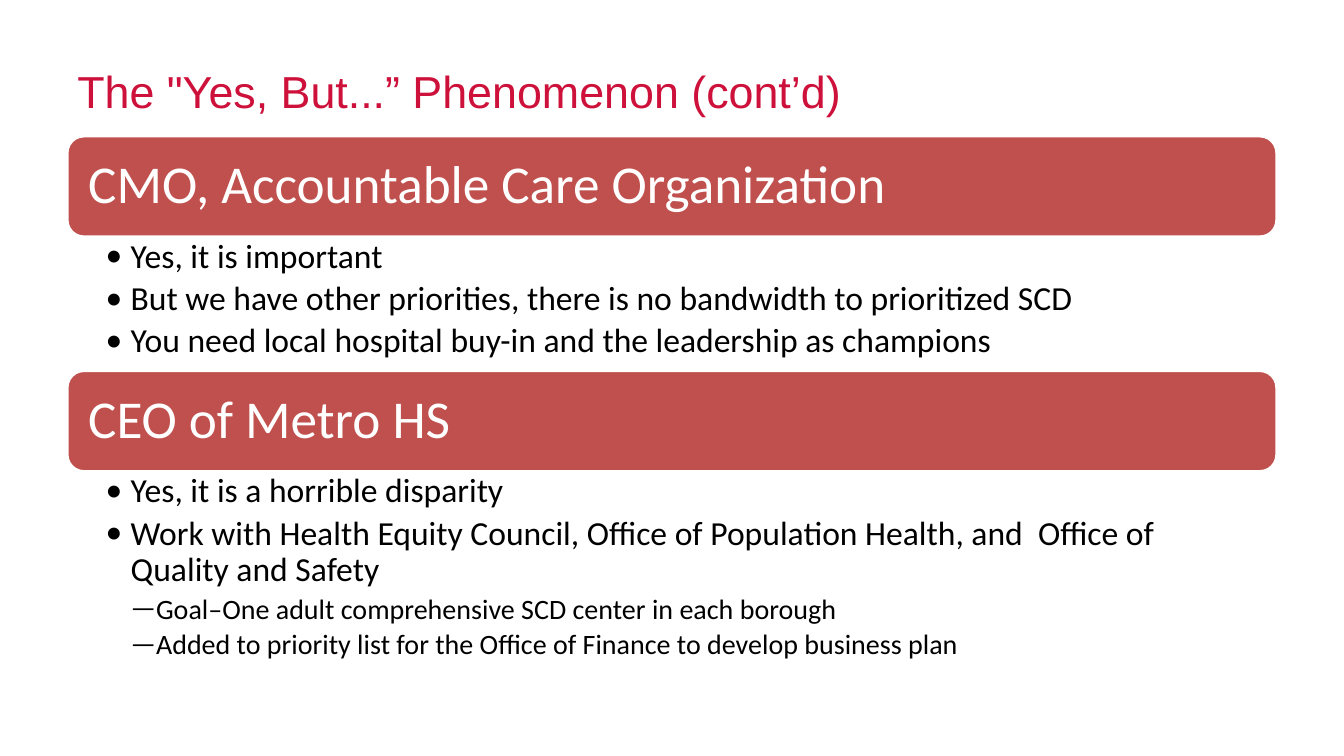
import pptx
import pptx.util
import pptx.dml.color
import pptx.enum.shapes
import pptx.enum.text
import pptx.oxml.ns
from lxml import etree

Pt = pptx.util.Pt
MIDDLE = pptx.enum.text.MSO_ANCHOR.MIDDLE
LEFT = pptx.enum.text.PP_ALIGN.LEFT
COLORS = {"title": "CD113B", "banner": "C0504D", "white": "FFFFFF", "text": "000000"}
LEVELS = {1: ("•", 24), 2: ("—", 20)}
INDENT = 18
BANNER_HEIGHT = 72
SECTIONS = [
    ("CMO, Accountable Care Organization", 97.2, 96, [
        (1, "Yes, it is important"),
        (1, "But we have other priorities, there is no bandwidth to prioritized SCD"),
        (1, "You need local hospital buy-in and the leadership as champions"),
    ]),
    ("CEO of Metro HS", 264.8, 145.4, [
        (1, "Yes, it is a horrible disparity"),
        (1, "Work with Health Equity Council, Office of Population Health, and  Office of Quality and Safety"),
        (2, "Goal–One adult comprehensive SCD center in each borough"),
        (2, "Added to priority list for the Office of Finance to develop business plan"),
    ]),
]


def rgb(name):
    return pptx.dml.color.RGBColor.from_string(COLORS[name])


def set_margins(tf, left, top, right, bottom):
    tf.word_wrap = True
    tf.margin_left, tf.margin_top = Pt(left), Pt(top)
    tf.margin_right, tf.margin_bottom = Pt(right), Pt(bottom)


def format_paragraph(p, font, size, color):
    p.alignment = LEFT
    p.line_spacing = 0.9
    p.space_before = Pt(0)
    for r in p.runs:
        r.font.name = font
        r.font.size = Pt(size)
        r.font.color.rgb = rgb(color)


def add_bullet(p, char, level):
    pPr = p._p.get_or_add_pPr()
    pPr.set("marL", str(Pt(INDENT * level)))
    pPr.set("indent", str(Pt(-INDENT)))
    qn = pptx.oxml.ns.qn
    etree.SubElement(pPr, qn("a:buFont")).set("typeface", "Calibri")
    etree.SubElement(pPr, qn("a:buChar")).set("char", char)


def set_title(s, text, x, y, w, h):
    sp = s.shapes.title
    sp.left, sp.top, sp.width, sp.height = Pt(x), Pt(y), Pt(w), Pt(h)
    tf = sp.text_frame
    tf.text = text
    tf.vertical_anchor = MIDDLE
    set_margins(tf, 7.2, 3.6, 7.2, 3.6)
    format_paragraph(tf.paragraphs[0], "Arial", 32, "title")


def add_banner(s, text, x, y, w, h):
    sp = s.shapes.add_shape(
        pptx.enum.shapes.MSO_SHAPE.ROUNDED_RECTANGLE, Pt(x), Pt(y), Pt(w), Pt(h))
    sp.shadow.inherit = False
    sp.fill.solid()
    sp.fill.fore_color.rgb = rgb("banner")
    sp.line.color.rgb = rgb("white")
    sp.line.width = Pt(2)
    tf = sp.text_frame
    tf.text = text
    tf.vertical_anchor = MIDDLE
    set_margins(tf, 11.5, 0, 11.5, 0)
    format_paragraph(tf.paragraphs[0], "Calibri", 38, "white")


def add_points(s, points, x, y, w, h):
    tf = s.shapes.add_textbox(Pt(x), Pt(y), Pt(w), Pt(h)).text_frame
    set_margins(tf, 27.4, 2.2, 13.7, 2.2)
    for i, (level, text) in enumerate(points):
        p = tf.paragraphs[0] if i == 0 else tf.add_paragraph()
        char, size = LEVELS[level]
        p.text = text
        p.level = level
        add_bullet(p, char, level)
        format_paragraph(p, "Calibri", size, "text")
        p.space_after = Pt(round(size * 0.18, 1))


def add_section(s, heading, points, x, y, w, h):
    add_banner(s, heading, x, y, w, BANNER_HEIGHT)
    add_points(s, points, x, y + BANNER_HEIGHT - 0.5, w, h - BANNER_HEIGHT)


def main():
    prs = pptx.Presentation()
    prs.slide_width, prs.slide_height = Pt(960), Pt(540)
    s = prs.slides.add_slide(prs.slide_layouts[5])
    set_title(s, "The \"Yes, But...” Phenomenon (cont’d)", 48, 39, 864, 56)
    for heading, top, points_height, points in SECTIONS:
        add_section(s, heading, points, 48, top, 864, BANNER_HEIGHT + points_height)
    prs.save("out.pptx")


if __name__ == "__main__":
    main()
